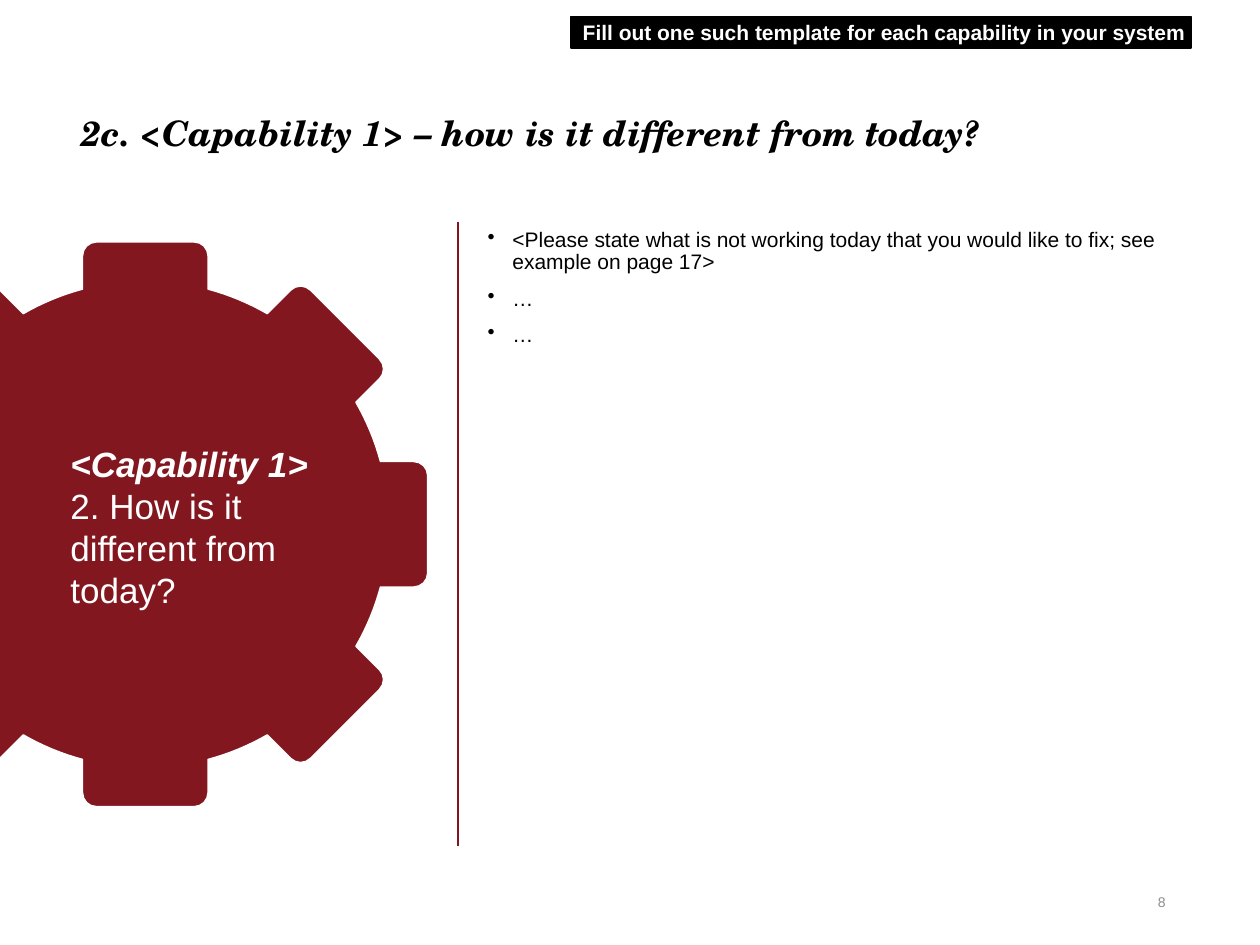
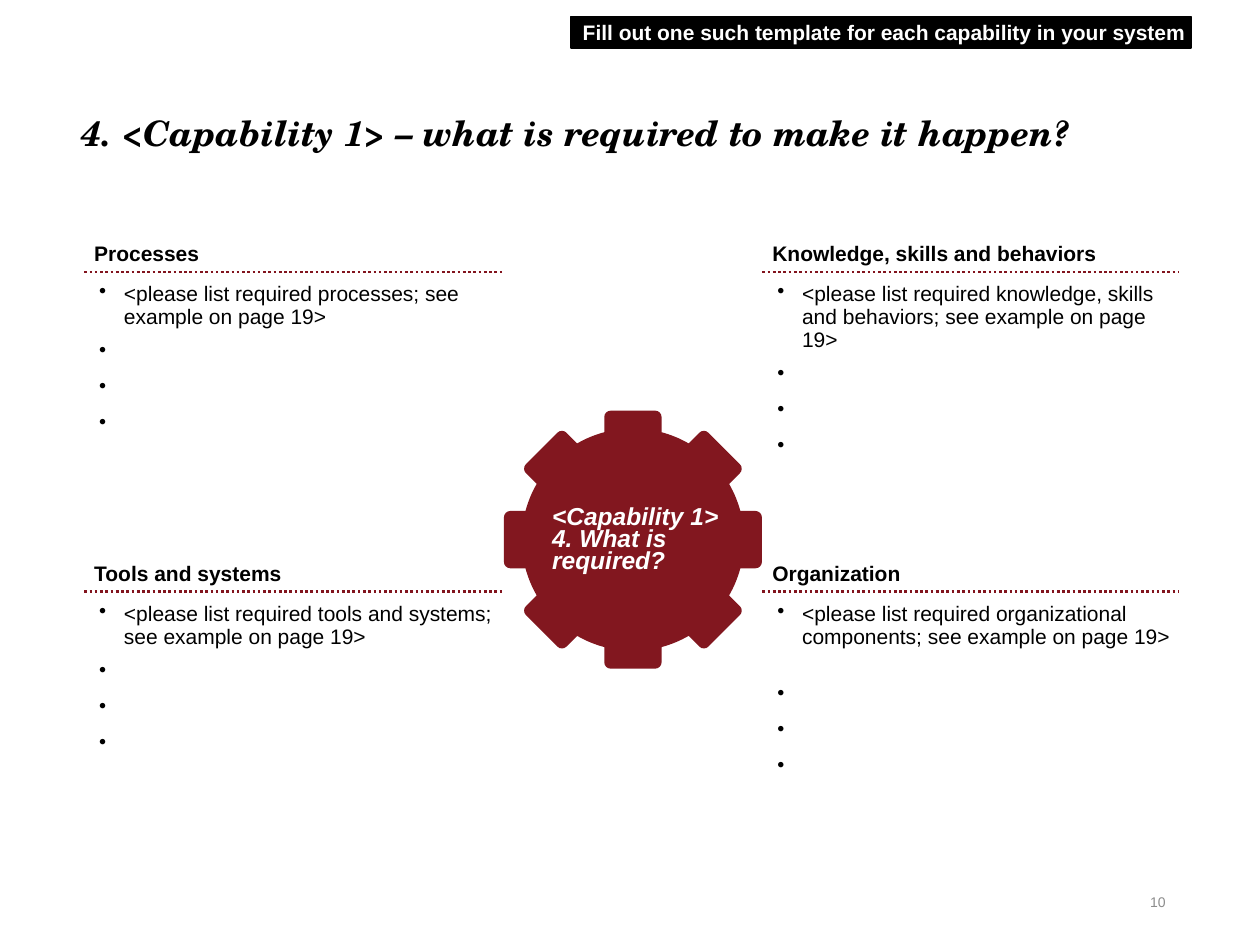
from math import asin, cos, pi, sin, sqrt

from pptx import Presentation
from pptx.dml.color import RGBColor
from pptx.enum.dml import MSO_LINE
from pptx.enum.shapes import MSO_CONNECTOR, MSO_SHAPE
from pptx.enum.text import MSO_ANCHOR as ANCHOR, PP_ALIGN as ALIGN
from pptx.oxml.ns import qn
from pptx.util import Cm, Pt

BLACK, WHITE, GREY = "000000", "FFFFFF", "8C8C8C"
GEAR_RED, RULE_RED = "82171F", "82141E"
BODY_FONT, TITLE_FONT = "Arial", "TeX Gyre Schola"
TAG = "Fill out one such template for each capability in your system"
TITLE_ONLY = 5


def rgb(value):
    """Return the colour for a hex string."""
    return RGBColor.from_string(value)


def add_run(p, text, size, color=BLACK, bold=False, italic=False, font=BODY_FONT):
    """Append one formatted run to a paragraph."""
    r = p.add_run()
    r.text = text
    r.font.name, r.font.size = font, Pt(size)
    r.font.bold, r.font.italic = bold, italic
    r.font.color.rgb = rgb(color)


def set_frame(tf, insets, anchor=ANCHOR.TOP, wrap=True):
    """Set wrapping, anchor and insets (left, top, right, bottom) in cm."""
    tf.word_wrap = wrap
    tf.vertical_anchor = anchor
    tf.margin_left, tf.margin_top, tf.margin_right, tf.margin_bottom = map(Cm, insets)


def add_text_box(s, box, insets=(0, 0, 0, 0), anchor=ANCHOR.TOP):
    """Add an empty text box and return its text frame."""
    tf = s.shapes.add_textbox(*map(Cm, box)).text_frame
    set_frame(tf, insets, anchor)
    return tf


def add_title(s, text):
    """Place and fill the title placeholder."""
    sp = s.shapes.title
    sp.left, sp.top, sp.width, sp.height = map(Cm, (1.65, 2.29, 22.1, 0.81))
    set_frame(sp.text_frame, (0, 0, 0, 0))
    p = sp.text_frame.paragraphs[0]
    p.alignment, p.line_spacing = ALIGN.LEFT, Pt(23)
    add_run(p, text, 20, bold=True, italic=True, font=TITLE_FONT)


def add_tag(s):
    """Add the black instruction band at the top right."""
    sp = s.shapes.add_shape(MSO_SHAPE.RECTANGLE, *map(Cm, (11.51, 0.33, 12.5, 0.64)))
    sp.shadow.inherit = False
    sp.fill.solid()
    sp.fill.fore_color.rgb = rgb(BLACK)
    sp.line.color.rgb = rgb(BLACK)
    sp.line.width = Pt(0.75)
    set_frame(sp.text_frame, (0.1, 0.05, 0.1, 0.05), ANCHOR.MIDDLE, wrap=False)
    p = sp.text_frame.paragraphs[0]
    p.alignment = ALIGN.RIGHT
    add_run(p, TAG, 12, WHITE, bold=True)


def add_page_number(s, number):
    """Add the grey page number at the bottom right."""
    tf = add_text_box(s, (22.25, 17.78, 1.5, 0.79), (0.25, 0.13, 0.25, 0.13), ANCHOR.MIDDLE)
    p = tf.paragraphs[0]
    p.alignment = ALIGN.RIGHT
    add_run(p, str(number), 8, GREY)


def add_rule(s, x1, y1, x2, y2, dash=None):
    """Add a red rule between two points."""
    line = s.shapes.add_connector(MSO_CONNECTOR.STRAIGHT, *map(Cm, (x1, y1, x2, y2)))
    line.line.color.rgb = rgb(RULE_RED)
    line.line.width = Pt(1.5)
    if dash:
        line.line.dash_style = dash
    sp_pr = line._element.spPr
    sp_pr.append(sp_pr.makeelement(qn("a:effectLst"), {}))


def gear_points(cx, cy, radius, teeth=8):
    """Return the outline of a gear with round-cornered teeth."""
    half, body, corner = 0.222, 0.862, 0.049
    base = sqrt(body ** 2 - half ** 2)
    turns = [pi / 2 * i / 4 for i in range(5)]
    right = [(half - corner + corner * sin(a), 1 - corner + corner * cos(a)) for a in turns]
    right.append((half, base))
    tooth = [(-x, y) for x, y in reversed(right)] + right
    start, pitch = asin(half / body), 2 * pi / teeth
    for i in range(1, 8):
        a = start + (pitch - 2 * start) * i / 8
        tooth.append((body * sin(a), body * cos(a)))
    points = []
    for k in range(teeth):
        c, d = cos(k * pitch), sin(k * pitch)
        points += [(cx + radius * (x * c + y * d), cy - radius * (y * c - x * d))
                   for x, y in tooth]
    return points


def add_gear(s, cx, cy, radius, left_edge=-0.1, outline=None):
    """Draw a red gear, cut off at the left edge."""
    points = [(Cm(max(x, left_edge)), Cm(y)) for x, y in gear_points(cx, cy, radius)]
    builder = s.shapes.build_freeform(*points[0])
    builder.add_line_segments(points[1:], close=True)
    sp = builder.convert_to_shape()
    sp.shadow.inherit = False
    sp.fill.solid()
    sp.fill.fore_color.rgb = rgb(GEAR_RED)
    if outline:
        sp.line.color.rgb = rgb(outline)
        sp.line.width = Pt(0.75)
    else:
        sp.line.fill.background()


def add_gear_label(s, box, name, question, size, emphasis, spacing=None):
    """Write the capability name and its question on a gear."""
    tf = add_text_box(s, box, anchor=ANCHOR.MIDDLE)
    for p, text, strong in ((tf.paragraphs[0], name, True),
                            (tf.add_paragraph(), question, emphasis)):
        if spacing:
            p.line_spacing = Pt(spacing)
        add_run(p, text, size, WHITE, strong, strong)


def add_bullets(s, box, items, second_gap=7.7):
    """Add a bulleted list, with its own gap above the second item."""
    tf = add_text_box(s, box, (0.3, 0.2, 0.1, 0))
    for i, text in enumerate(items):
        p = tf.add_paragraph() if i else tf.paragraphs[0]
        p_pr = p._p.get_or_add_pPr()
        p_pr.set("marL", str(Cm(0.5)))
        p_pr.set("indent", str(-Cm(0.5)))
        p_pr.append(p_pr.makeelement(qn("a:buChar"), {"char": "•"}))
        p.line_spacing = 0.9
        if i:
            p.space_before = Pt(second_gap if i == 1 else 7.7)
        add_run(p, text, 12)


def add_requirement(s, left, top, width, heading, prompt, second_gap=7.7):
    """Add a heading, dotted rule and list with three open bullets."""
    tf = add_text_box(s, (left, top, width, 1.07), (0.2, 0.1, 0.1, 0.1), ANCHOR.MIDDLE)
    p = tf.paragraphs[0]
    p.line_spacing = Pt(21.6)
    add_run(p, heading, 12, bold=True)
    add_bullets(s, (left, top + 1.07, width, 4.95), [prompt] + [" "] * 3, second_gap)
    add_rule(s, left, top + 1.03, left + width, top + 1.03, MSO_LINE.ROUND_DOT)


def add_base_slide(prs, title, number):
    """Add a slide with the shared title, band and page number."""
    s = prs.slides.add_slide(prs.slide_layouts[TITLE_ONLY])
    add_title(s, title)
    add_tag(s)
    add_page_number(s, number)
    return s


def add_difference_slide(prs):
    """Build the slide on how the capability differs from today."""
    s = add_base_slide(prs, "2c. <Capability 1> – how is it different from today?", 8)
    add_bullets(s, (9.53, 4.42, 14.22, 12.5), [
        "<Please state what is not working today that you would like to fix; "
        "see example on page 17>", "…", "…"])
    add_gear(s, 2.93, 10.57, 5.69, outline=WHITE)
    add_gear_label(s, (1.42, 8.89, 4.8, 3.43), "<Capability 1>",
                   "2. How is it different from today?", 20, emphasis=False)
    add_rule(s, 9.23, 4.47, 9.23, 17.05)


def add_requirements_slide(prs):
    """Build the slide on what the capability requires."""
    s = add_base_slide(prs, "4. <Capability 1> – what is required to make it happen?", 10)
    columns, rows = ((1.7, 8.46), (15.37, 8.38)), (4.45, 10.9)
    requirements = (
        (("Processes", "processes"),
         ("Knowledge, skills and behaviors", "knowledge, skills and behaviors")),
        (("Tools and systems", "tools and systems"),
         ("Organization", "organizational components", 20.6)),
    )
    for top, row in zip(rows, requirements):
        for (left, width), (heading, needs, *gap) in zip(columns, row):
            prompt = f"<please list required {needs}; see example on page 19>"
            add_requirement(s, left, top, width, heading, prompt, *gap)
    add_gear(s, 12.76, 10.88, 2.6)
    add_gear_label(s, (11.13, 10.21, 3.38, 1.4), "<Capability 1>",
                   "4. What is required?", 14, emphasis=True, spacing=12.6)


def main():
    """Build and save the presentation."""
    prs = Presentation()
    prs.slide_width, prs.slide_height = Cm(25.4), Cm(19.05)
    add_difference_slide(prs)
    add_requirements_slide(prs)
    prs.save("out.pptx")


if __name__ == "__main__":
    main()
